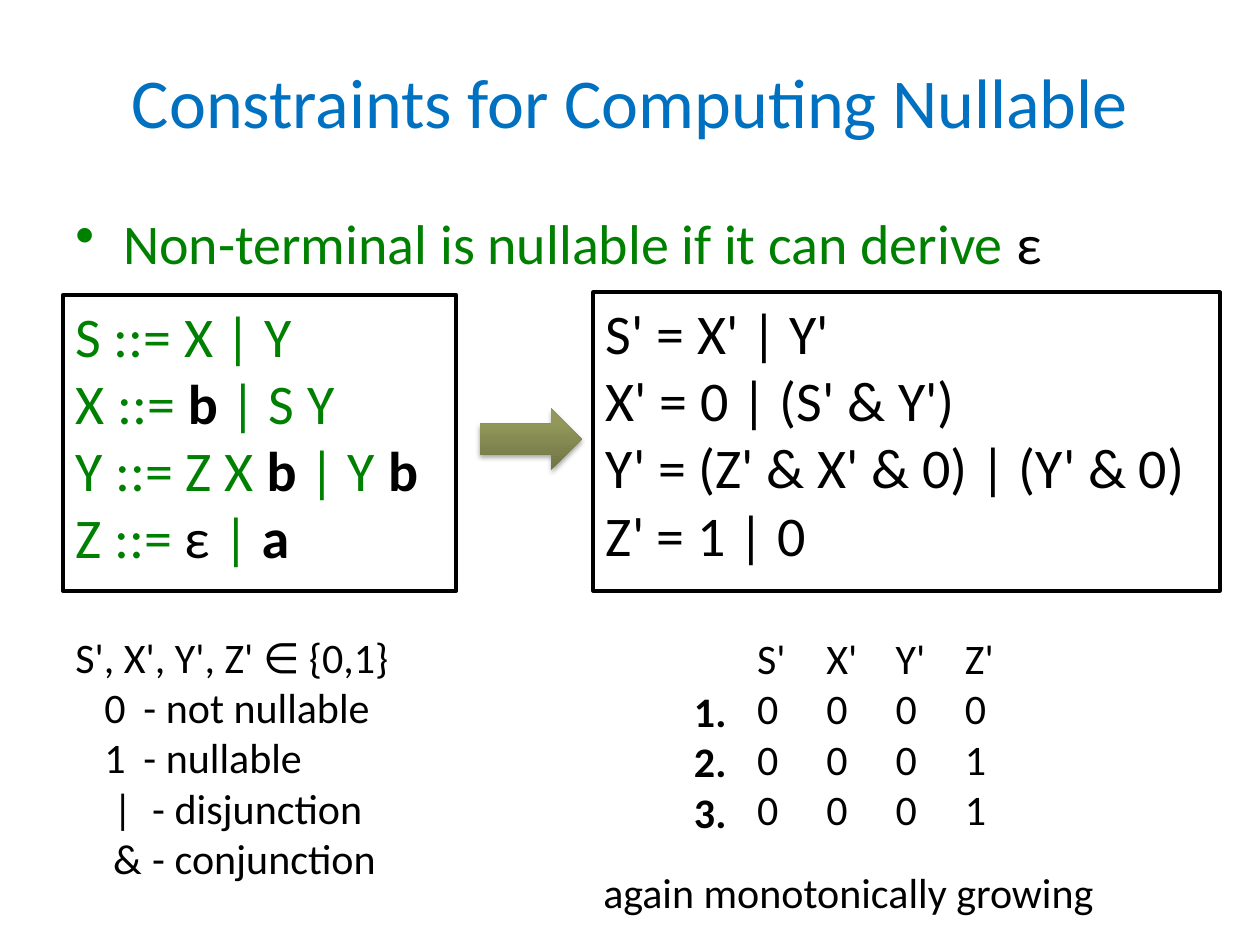
"""Build a slide on the constraints for computing nullable non-terminals."""
from typing import NamedTuple

from lxml import etree
from pptx import Presentation
from pptx import util as u
from pptx.dml.color import RGBColor
from pptx.enum import shapes, text
from pptx.oxml.ns import qn

COLORS = {"title": "0070C0", "grammar": "008000", "ink": "000000",
          "arrow_dark": "707446", "arrow_light": "93985A"}
FONT = "Calibri"


class Box(NamedTuple):
    left: float
    top: float
    width: float
    height: float

    def lengths(self) -> list:
        """Return the place and size as lengths."""
        return [u.Inches(value) for value in self]


class Run(NamedTuple):
    text: str
    color: str = "ink"
    bold: bool = False


def rgb(name: str) -> RGBColor:
    """Return a named colour."""
    return RGBColor.from_string(COLORS[name])


def green(words: str) -> Run:
    """Return a run in the grammar colour."""
    return Run(words, "grammar")


def terminal(words: str) -> Run:
    """Return a bold run."""
    return Run(words, bold=True)


def add_tabs(paragraph, stops: list[float]) -> None:
    """Give a paragraph left tab stops, in inches."""
    tabs = etree.SubElement(paragraph._p.get_or_add_pPr(), qn("a:tabLst"))
    for stop in stops:
        etree.SubElement(tabs, qn("a:tab"), pos=str(u.Inches(stop)), algn="l")


def add_bullet(paragraph, indent: float) -> None:
    """Give a paragraph a round bullet and a hanging indent."""
    properties = paragraph._p.get_or_add_pPr()
    properties.set("marL", str(u.Inches(indent)))
    properties.set("indent", str(-u.Inches(indent)))
    etree.SubElement(properties, qn("a:buChar"), char="•")


def add_text(slide, box: Box, paragraphs: list[list[Run]], *, size=24, framed=False,
             align=text.PP_ALIGN.LEFT, anchor=text.MSO_ANCHOR.TOP, before=0,
             tabs=(), bullet=0.0) -> None:
    """Add formatted text; a line feed in a run breaks the line."""
    shape = slide.shapes.add_textbox(*box.lengths())
    if framed:
        shape.line.color.rgb = rgb("ink")
        shape.line.width = u.Pt(2.25)
    frame = shape.text_frame
    frame.word_wrap = True
    frame.vertical_anchor = anchor
    for index, runs in enumerate(paragraphs):
        paragraph = frame.paragraphs[0] if index == 0 else frame.add_paragraph()
        paragraph.alignment = align
        paragraph.space_before = u.Pt(before)
        if bullet:
            add_bullet(paragraph, bullet)
        if tabs:
            add_tabs(paragraph, tabs[min(index, len(tabs) - 1)])
        for item in runs:
            for number, line in enumerate(item.text.split("\n")):
                if number:
                    paragraph.add_line_break()
                if line:
                    run = paragraph.add_run()
                    run.text = line
                    run.font.name = FONT
                    run.font.size = u.Pt(size)
                    run.font.bold = item.bold
                    run.font.color.rgb = rgb(item.color)


def add_arrow(slide, box: Box) -> None:
    """Add a block arrow with a gradient and a soft shadow."""
    shape = slide.shapes.add_shape(shapes.MSO_SHAPE.RIGHT_ARROW, *box.lengths())
    shape.fill.gradient()
    shape.fill.gradient_angle = 90
    for stop, place, name in zip(shape.fill.gradient_stops, (0, 0.8),
                                 ("arrow_dark", "arrow_light")):
        stop.position = place
        stop.color.rgb = rgb(name)
    shape.line.fill.background()
    shape.shadow.inherit = False
    effects = shape._element.spPr.find(qn("a:effectLst"))
    shadow = etree.SubElement(effects, qn("a:outerShdw"), blurRad=str(u.Pt(3.1)),
                              dist=str(u.Pt(1.8)), dir="5400000", rotWithShape="0")
    color = etree.SubElement(shadow, qn("a:srgbClr"), val=COLORS["ink"])
    etree.SubElement(color, qn("a:alpha"), val="35000")


def main() -> None:
    """Build and save the slide."""
    presentation = Presentation()
    presentation.slide_width = u.Inches(10)
    presentation.slide_height = u.Inches(7.5)
    slide = presentation.slides.add_slide(presentation.slide_layouts[6])

    add_text(slide, Box(0.5, 0.17, 9, 1.25),
             [[Run("Constraints for Computing Nullable", "title")]], size=40,
             align=text.PP_ALIGN.CENTER, anchor=text.MSO_ANCHOR.MIDDLE)
    add_text(slide, Box(0.5, 1.61, 9, 0.64),
             [[green("Non-terminal is nullable if it can derive "), Run("ε")]],
             size=32, before=2, bullet=0.38)

    grammar = [green("S ::= X | Y\nX ::= "), terminal("b"),
               green(" | S Y\nY ::= Z X "), terminal("b"), green(" | Y "),
               terminal("b\n"), green("Z ::= "), Run("ε "), green("|"),
               terminal(" a")]
    constraints = [Run("S' = X' | Y'\nX' = 0 | (S' & Y')\n"
                       "Y' = (Z' & X' & 0) | (Y' & 0)\nZ' = 1 | 0")]
    for box, runs in ((Box(0.5, 2.34, 3.12, 2.35), grammar),
                      (Box(4.71, 2.32, 4.97, 2.37), constraints)):
        add_text(slide, box, [runs], size=32, framed=True, before=2)
    add_arrow(slide, Box(3.81, 3.24, 0.81, 0.49))

    legend = ["S', X', Y', Z' ∈ {0,1}", "\t0\t- not nullable", "\t1\t- nullable",
              "\t|\t- disjunction", "\t&\t- conjunction"]
    values, operators = [0.23, 0.54], [0.3, 0.61]
    add_text(slide, Box(0.5, 4.96, 3.12, 2.12), [[Run(line)] for line in legend],
             tabs=[values] * 3 + [operators])

    steps = [["S'", "X'", "Y'", "Z'"], "0000", "0001", "0001"]
    columns = [0.37 + 0.55 * column for column in range(4)]
    add_text(slide, Box(5.54, 4.97, 2.51, 1.72),
             [[Run("\t" + "\t".join(step))] for step in steps], tabs=[columns])
    add_text(slide, Box(5.41, 5.39, 0.46, 1.31),
             [[terminal(f"{number}.")] for number in range(1, len(steps))])
    add_text(slide, Box(4.69, 6.83, 4.14, 0.5), [[Run("again monotonically growing")]])

    presentation.save("out.pptx")


if __name__ == "__main__":
    main()
